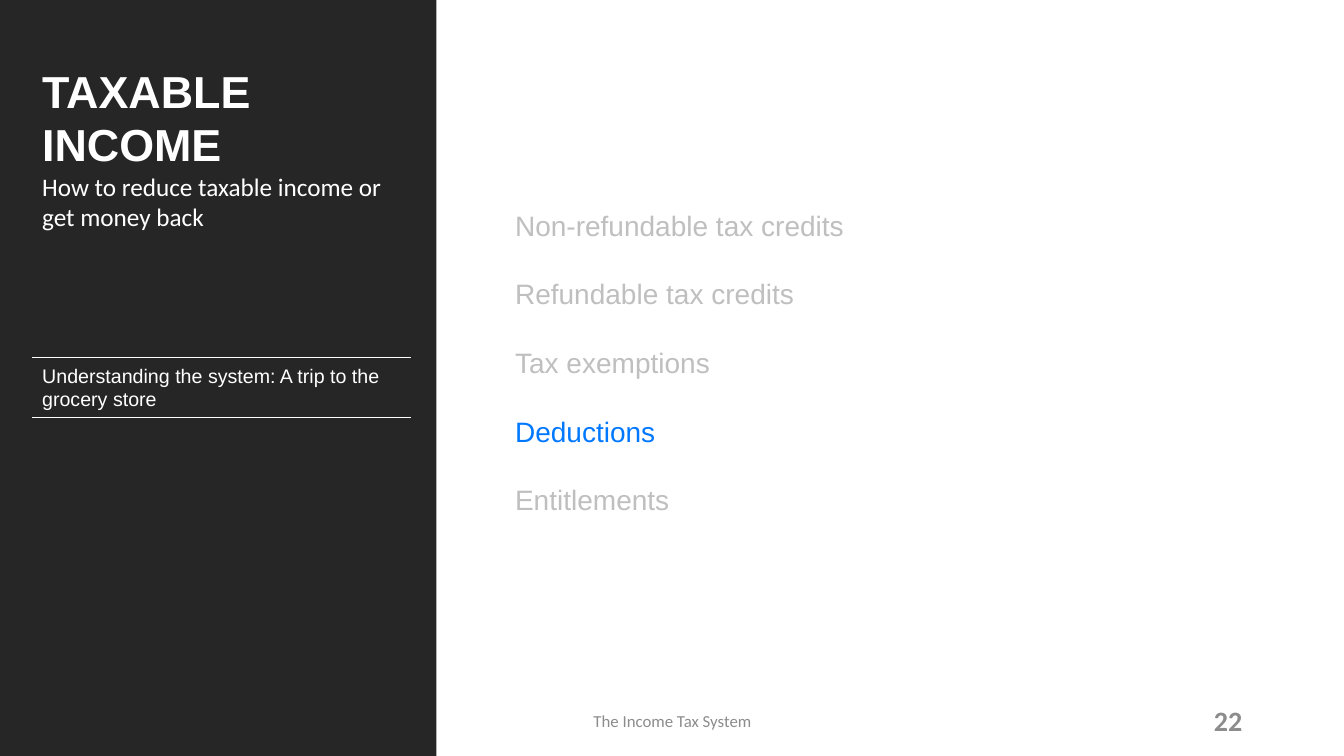
from pptx import Presentation, util as u
from pptx.dml.color import RGBColor
from pptx.enum import shapes, text
from pptx.oxml.ns import qn
from lxml import etree

COLOURS = {"panel": "262626", "white": "FFFFFF", "muted": "BFBFBF",
           "active": "0078FF", "footer": "8C8C8C"}


class SlideBuilder:
    def __init__(self, page):
        self.page = page

    def colour(self, name):
        return RGBColor.from_string(COLOURS[name])

    def panel(self, left, top, width, height, fill):
        shape = self.page.shapes.add_shape(
            shapes.MSO_SHAPE.RECTANGLE, *map(u.Inches, (left, top, width, height)))
        shape.shadow.inherit = False
        shape.fill.solid()
        shape.fill.fore_color.rgb = self.colour(fill)
        shape.line.fill.background()

    def rule(self, left, right, y):
        line = self.page.shapes.add_connector(
            shapes.MSO_CONNECTOR.STRAIGHT, *map(u.Inches, (left, y, right, y)))
        line.line.color.rgb = self.colour("white")
        line.line.width = u.Pt(0.5)
        etree.SubElement(line._element.spPr, qn("a:effectLst"))

    def textbox(self, left, top, width, height, lines, align="LEFT", gap=0, **frame_format):
        """Each line is (words, font name, size, colour, bold)."""
        box = self.page.shapes.add_textbox(*map(u.Inches, (left, top, width, height)))
        frame = box.text_frame
        for name, value in {"word_wrap": True, **frame_format}.items():
            setattr(frame, name, value)
        for index, (words, font, size, colour, bold) in enumerate(lines):
            para = frame.add_paragraph() if index else frame.paragraphs[0]
            para.alignment = text.PP_ALIGN[align]
            if index and gap:
                para.space_before = u.Pt(gap)
            span = para.add_run()
            span.text = words
            for name, value in {"name": font, "size": u.Pt(size), "bold": bold}.items():
                setattr(span.font, name, value)
            span.font.color.rgb = self.colour(colour)


def main():
    deck = Presentation()
    deck.slide_width, deck.slide_height = u.Inches(13.33), u.Inches(7.5)
    builder = SlideBuilder(deck.slides.add_slide(deck.slide_layouts[6]))
    middle = {"vertical_anchor": text.MSO_ANCHOR.MIDDLE}
    grow = {"auto_size": text.MSO_AUTO_SIZE.SHAPE_TO_FIT_TEXT}

    # Topic list with the current topic highlighted
    topics = ["Non-refundable tax credits", "Refundable tax credits",
              "Tax exemptions", "Deductions", "Entitlements"]
    current = "Deductions"
    builder.textbox(
        5.01, 0.77, 7.25, 5.65,
        [(topic, "Arial", 20, "active" if topic == current else "muted", False)
         for topic in topics],
        gap=25, margin_top=u.Inches(0.1), margin_bottom=u.Inches(0.1), **middle)

    # Side panel with heading and section name
    left, width = 0.32, 3.76
    builder.panel(0, 0, 4.33, 7.5, "panel")
    builder.textbox(left, 0.58, width, 1.78, [
        ("TAXABLE INCOME", "Arial", 32, "white", True),
        ("How to reduce taxable income or get money back", "Calibri", 18, "white", False),
    ], **grow)
    builder.textbox(left, 3.56, width, 0.57, [
        ("Understanding the system: A trip to the grocery store", "Arial", 14, "white", False),
    ], **grow)
    for y in (3.55, 4.14):
        builder.rule(left, left + width, y)

    # Footer and page number
    builder.textbox(4.42, 6.95, 4.5, 0.4,
                    [("The Income Tax System", "Calibri", 12, "footer", False)],
                    align="CENTER", **middle)
    builder.textbox(9.42, 6.95, 3, 0.4,
                    [("22", "Calibri", 20, "footer", True)], align="RIGHT", **middle)

    deck.save("out.pptx")


if __name__ == "__main__":
    main()
